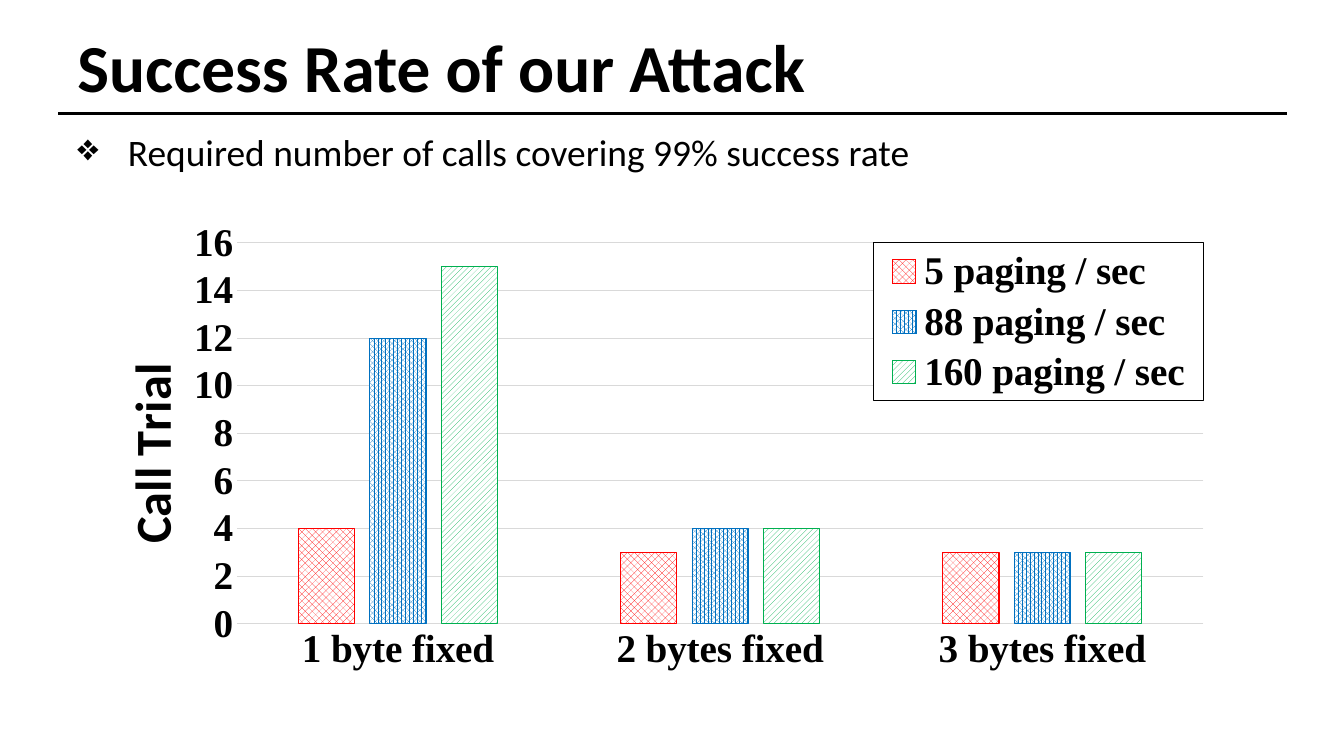
from dataclasses import dataclass

from lxml import etree
from pptx import Presentation
from pptx.chart.data import CategoryChartData
from pptx.dml.color import RGBColor
from pptx.enum.chart import XL_CHART_TYPE as ChartType
from pptx.enum.chart import XL_LEGEND_POSITION as LegendPosition
from pptx.enum.chart import XL_TICK_MARK as TickMark
from pptx.enum.dml import MSO_PATTERN as Pattern
from pptx.enum.shapes import MSO_CONNECTOR as Connector
from pptx.enum.text import MSO_ANCHOR as Anchor
from pptx.oxml import parse_xml
from pptx.oxml.ns import nsdecls, qn
from pptx.util import Inches, Pt


@dataclass(frozen=True)
class Theme:
    ink: str = "000000"
    paper: str = "FFFFFF"
    grid: str = "D9D9D9"
    red: str = "FF0000"
    blue: str = "0070C0"
    green: str = "00B050"
    sans: str = "Calibri"
    serif: str = "Times New Roman"
    title: float = 48
    body: float = 26.7
    axis_title: float = 36
    chart: float = 28
    rule: float = 2
    hairline: float = 0.75


THEME = Theme()
CATEGORIES = ("1 byte fixed", "2 bytes fixed", "3 bytes fixed")
PAGING_RATES = (
    ("5 paging / sec", (4, 3, 3), Pattern.PERCENT_50, THEME.red),
    ("88 paging / sec", (12, 4, 3), Pattern.PERCENT_75, THEME.blue),
    ("160 paging / sec", (15, 4, 3), Pattern.WIDE_UPWARD_DIAGONAL, THEME.green),
)


def rgb(color):
    return RGBColor.from_string(color)


def style_font(font, name, size, bold=False):
    font.name, font.size, font.bold = name, Pt(size), bold
    font.color.rgb = rgb(THEME.ink)


def style_line(line, color, width=THEME.hairline):
    line.color.rgb = rgb(color)
    line.width = Pt(width)


def add_text(slide, box, text, size, bold=False, anchor=Anchor.TOP):
    frame = slide.shapes.add_textbox(*map(Inches, box)).text_frame
    frame.word_wrap = True
    frame.vertical_anchor = anchor
    frame.text = text
    paragraph = frame.paragraphs[0]
    style_font(paragraph.runs[0].font, THEME.sans, size, bold)
    return paragraph


def add_header(slide, box):
    """Title with the rule that underlines it."""
    left, top, width, height = box
    add_text(slide, box, "Success Rate of our Attack", THEME.title, True, Anchor.MIDDLE)
    rule_y = Inches(top + height + 0.01)
    rule = slide.shapes.add_connector(
        Connector.STRAIGHT, Inches(left - 0.09), rule_y,
        Inches(left + width + 0.09), rule_y)
    style_line(rule.line, THEME.ink, THEME.rule)
    etree.SubElement(rule._element.spPr, qn("a:effectLst"))


def add_bullet(slide, box):
    paragraph = add_text(
        slide, box, "Required number of calls covering 99% success rate", THEME.body)
    properties = paragraph._p.get_or_add_pPr()
    properties.set("marL", str(Inches(0.5)))
    properties.set("indent", str(-Inches(0.5)))
    etree.SubElement(properties, qn("a:buChar")).set("char", "❖")


def place(element, index, inner=False, **fractions):
    """Give a chart part a manual layout in fractions of the chart."""
    for old in element.findall(qn("c:layout")):
        element.remove(old)
    target = '<c:layoutTarget val="inner"/>' if inner else ""
    modes = "".join(f'<c:{key}Mode val="edge"/>' for key in "xy")
    values = "".join(f'<c:{key} val="{value}"/>' for key, value in fractions.items())
    element.insert(index, parse_xml(
        f'<c:layout {nsdecls("c")}><c:manualLayout>{target}{modes}{values}'
        '</c:manualLayout></c:layout>'))


def style_axes(chart):
    for axis in (chart.category_axis, chart.value_axis):
        axis.major_tick_mark = axis.minor_tick_mark = TickMark.NONE
        style_font(axis.tick_labels.font, THEME.serif, THEME.chart, True)
    style_line(chart.category_axis.format.line, THEME.grid)

    axis = chart.value_axis
    axis.minimum_scale, axis.maximum_scale, axis.major_unit = 0, 16, 2
    axis.format.line.fill.background()
    style_line(axis.major_gridlines.format.line, THEME.grid)
    frame = axis.axis_title.text_frame
    frame.text = "Call Trial"
    style_font(frame.paragraphs[0].runs[0].font, THEME.sans, THEME.axis_title, True)
    place(axis.axis_title._element, 1, x=0.05, y=0.29)


def style_legend(chart):
    chart.has_legend = True
    legend = chart.legend
    legend.position = LegendPosition.BOTTOM
    legend.include_in_layout = False
    style_font(legend.font, THEME.serif, THEME.chart, True)
    place(legend._element, 1, x=0.7, y=0.05, w=0.28, h=0.34)
    legend._element.find(qn("c:overlay")).addnext(parse_xml(
        f'<c:spPr {nsdecls("c", "a")}>'
        f'<a:solidFill><a:srgbClr val="{THEME.paper}"/></a:solidFill>'
        f'<a:ln w="{Pt(THEME.hairline)}"><a:solidFill>'
        f'<a:srgbClr val="{THEME.ink}"/></a:solidFill></a:ln></c:spPr>'))


def add_call_chart(slide, box):
    data = CategoryChartData()
    data.categories = CATEGORIES
    for name, calls, _, _ in PAGING_RATES:
        data.add_series(name, calls)
    chart = slide.shapes.add_chart(
        ChartType.COLUMN_CLUSTERED, *map(Inches, box), data).chart
    chart.has_title = False
    style_font(chart.font, THEME.sans, 10)
    plot = chart.plots[0]
    plot.vary_by_categories = False
    plot.gap_width, plot.overlap = 219, -27
    for series, (_, _, pattern, color) in zip(plot.series, PAGING_RATES):
        fill = series.format.fill
        fill.patterned()
        fill.pattern = pattern
        fill.fore_color.rgb, fill.back_color.rgb = rgb(color), rgb(THEME.paper)
        style_line(series.format.line, color)
    style_axes(chart)
    style_legend(chart)
    plot_area = chart._chartSpace.chart.plotArea
    place(plot_area, 0, inner=True, x=0.16, y=0.05, w=0.82, h=0.82)


def main():
    presentation = Presentation()
    presentation.slide_width, presentation.slide_height = Inches(13.33), Inches(7.5)
    slide = presentation.slides.add_slide(presentation.slide_layouts[6])
    add_call_chart(slide, (0.48, 2.18, 11.69, 4.61))
    add_header(slide, (0.67, 0.18, 12, 0.94))
    add_bullet(slide, (0.67, 1.23, 12, 5.67))
    presentation.save("out.pptx")


if __name__ == "__main__":
    main()
